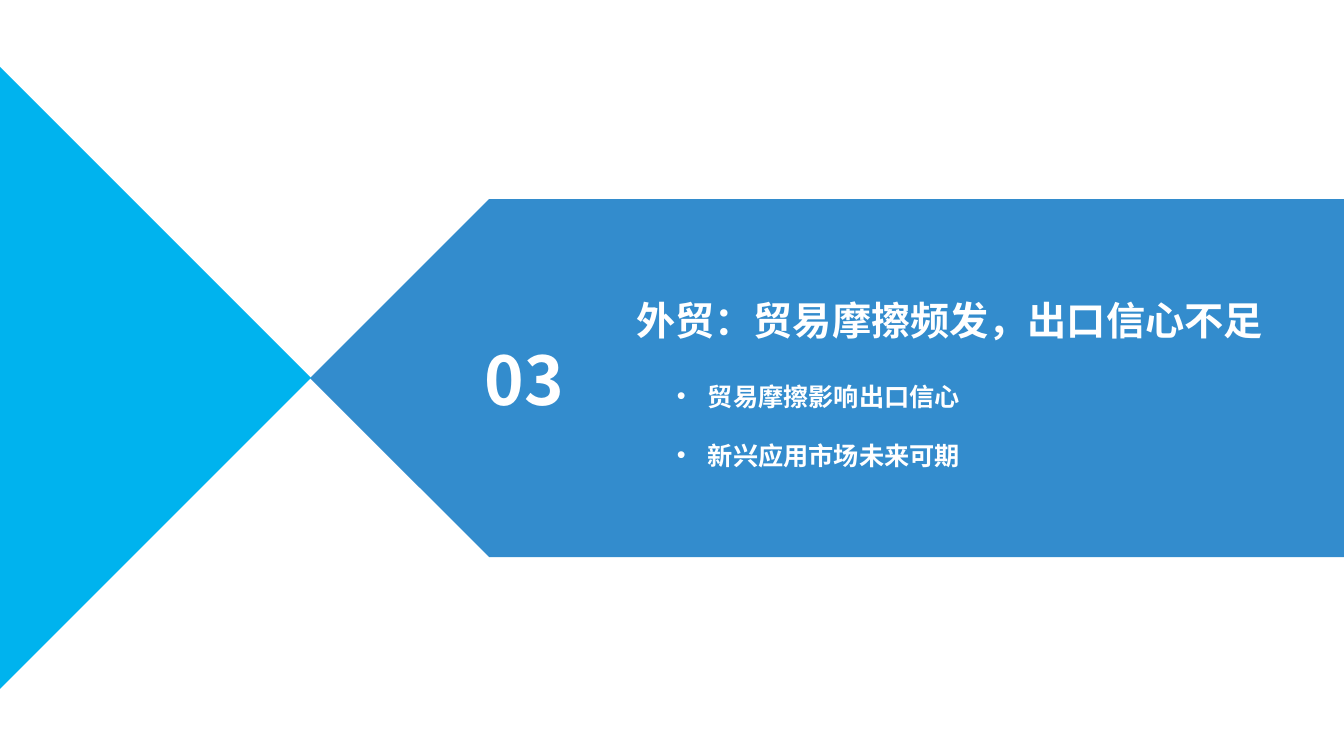
from dataclasses import dataclass

from lxml import etree
from pptx import Presentation
from pptx.dml.color import RGBColor
from pptx.enum.shapes import MSO_SHAPE
from pptx.enum.text import MSO_ANCHOR, PP_ALIGN
from pptx.oxml.ns import qn
from pptx.util import Emu, Pt

PLATE = MSO_SHAPE.PENTAGON
CENTER, LEFT = PP_ALIGN.CENTER, PP_ALIGN.LEFT
TOP = MSO_ANCHOR.TOP
SCALE = 914400 / 100.8
WIDTH, HEIGHT = 1344, 756
WHITE, BLUE, CYAN = "FFFFFF", "0170C1", "00B3EE"
SANS, ARIAL = "Noto Sans CJK SC", "Arial"
INDENT = 31


@dataclass
class Label:
    text: str
    left: int
    top: int
    width: int
    height: int
    size: int
    font: str = SANS
    inset: tuple[int, int] = (10, 5)
    bullet: bool = False


def px(value: int) -> Emu:
    return Emu(round(value * SCALE))


def color(value: str) -> RGBColor:
    return RGBColor.from_string(value)


def paint(shape, value: str) -> None:
    shape.shadow.inherit = False
    shape.fill.solid()
    shape.fill.fore_color.rgb = color(value)
    shape.line.fill.background()


def add_banner(slide) -> None:
    banner = slide.shapes.add_shape(PLATE, px(310), px(199), px(1034), px(358))
    banner.rotation = 180
    paint(banner, BLUE)
    tint = banner.fill._xPr.find(".//" + qn("a:srgbClr"))
    etree.SubElement(tint, qn("a:alpha"), val="80000")


def add_wedge(slide) -> None:
    pen = slide.shapes.build_freeform(0, 67, scale=SCALE)
    pen.add_line_segments([(311, 378), (0, 689)], close=True)
    paint(pen.convert_to_shape(), CYAN)


def add_label(slide, label: Label) -> None:
    box = slide.shapes.add_textbox(
        px(label.left), px(label.top), px(label.width), px(label.height))
    frame = box.text_frame
    frame.word_wrap = True
    frame.vertical_anchor = TOP
    side, edge = label.inset
    frame.margin_left = frame.margin_right = px(side)
    frame.margin_top = frame.margin_bottom = px(edge)
    para = frame.paragraphs[0]
    para.text = label.text
    para.alignment = LEFT if label.bullet else CENTER
    font = para.font
    font.name, font.size, font.bold = label.font, Pt(label.size), True
    font.color.rgb = color(WHITE)
    props = para._p.get_or_add_pPr()
    base = props.find(qn("a:defRPr"))
    latin = base.find(qn("a:latin"))
    latin.addnext(etree.Element(qn("a:ea"), typeface=SANS))
    if label.bullet:
        props.set("marL", str(px(INDENT)))
        props.set("indent", str(-px(INDENT)))
        face = etree.Element(qn("a:buFont"), typeface=ARIAL)
        mark = etree.Element(qn("a:buChar"), char="•")
        base.addprevious(face)
        base.addprevious(mark)


def main() -> None:
    deck = Presentation()
    deck.slide_width, deck.slide_height = px(WIDTH), px(HEIGHT)
    slide = deck.slides.add_slide(deck.slide_layouts[6])

    # Background shapes
    add_banner(slide)
    add_wedge(slide)

    # Section number and title
    add_label(slide, Label("03", 450, 333, 149, 92, 48))
    add_label(slide, Label("外贸：贸易摩擦频发，出口信心不足",
                           587, 296, 725, 47, 28, ARIAL, (0, 0)))

    # Topics
    topics = ["贸易摩擦影响出口信心", "新兴应用市场未来可期"]
    for row, topic in enumerate(topics):
        add_label(slide, Label(topic, 667, 376 + 59 * row, 453, 40, 18,
                               bullet=True))

    deck.save("out.pptx")


if __name__ == "__main__":
    main()
